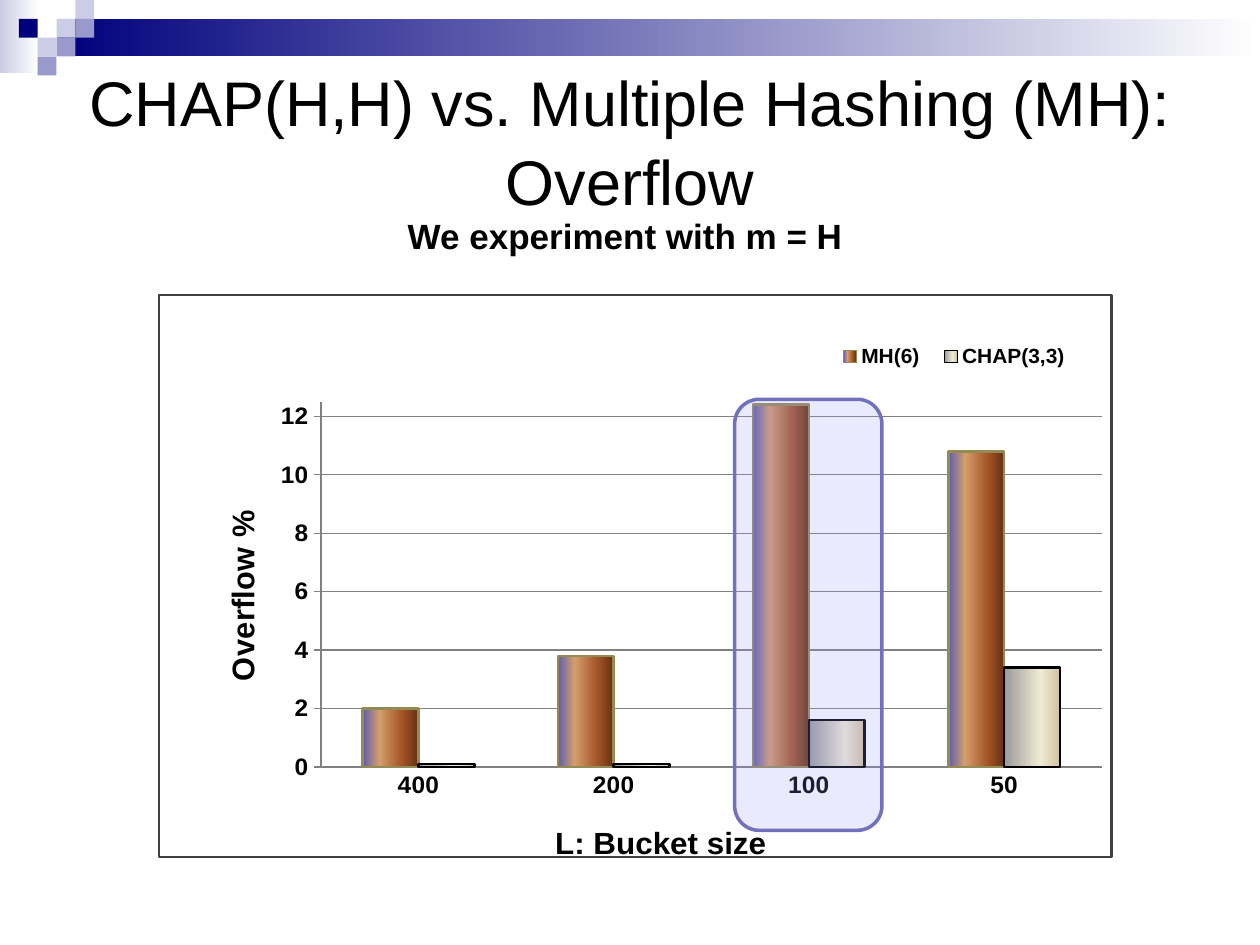
from dataclasses import dataclass

from lxml import etree
from pptx import Presentation
from pptx.chart.data import CategoryChartData
from pptx.dml.color import RGBColor
from pptx.enum.chart import XL_CHART_TYPE, XL_LEGEND_POSITION, XL_TICK_MARK
from pptx.enum.shapes import MSO_SHAPE
from pptx.enum.text import MSO_ANCHOR, MSO_AUTO_SIZE, PP_ALIGN
from pptx.oxml import parse_xml
from pptx.oxml.ns import nsdecls, qn
from pptx.util import Cm, Pt

RECTANGLE = MSO_SHAPE.RECTANGLE
ROUNDED = MSO_SHAPE.ROUNDED_RECTANGLE
CENTER = PP_ALIGN.CENTER
COLUMNS = XL_CHART_TYPE.COLUMN_CLUSTERED
LEGEND_RIGHT = XL_LEGEND_POSITION.RIGHT
TICK_CROSS = XL_TICK_MARK.CROSS
TICK_NONE = XL_TICK_MARK.NONE


@dataclass(frozen=True)
class Theme:
    font: str = "Arial"
    text: str = "000000"
    navy: str = "00007D"
    mid: str = "9999CC"
    pale: str = "CCCCE6"
    white: str = "FFFFFF"
    grid: str = "808080"
    frame: str = "404040"
    highlight: str = "9999FF"
    highlight_line: str = "7171BD"
    highlight_opacity: int = 20
    title_size: int = 36
    subtitle_size: int = 20
    axis_title_size: int = 18
    tick_size: int = 14
    legend_size: int = 12
    copper: tuple = ((0, "5D5DAE"), (30, "D49E6C"), (70, "A65528"), (100, "663012"))
    cream: tuple = ((0, "999999"), (65, "F0EBD5"), (100, "D1C39F"))
    copper_line: str = "948A54"


THEME = Theme()


def rgb(value):
    return RGBColor.from_string(value)


def style_font(font, size, bold=False):
    font.name = THEME.font
    font.size = Pt(size)
    font.bold = bold
    font.color.rgb = rgb(THEME.text)


def style_line(line, color, width):
    line.color.rgb = rgb(color)
    line.width = Pt(width)


def fill_gradient(fill, properties, stops):
    fill.gradient()
    fill.gradient_angle = 0
    stop_list = properties.find(qn("a:gradFill")).find(qn("a:gsLst"))
    for stop in list(stop_list):
        stop_list.remove(stop)
    for position, color in stops:
        stop = etree.SubElement(stop_list, qn("a:gs"), pos=str(position * 1000))
        etree.SubElement(stop, qn("a:srgbClr"), val=color)


def add_block(slide, kind, box):
    shape = slide.shapes.add_shape(kind, *(Cm(length) for length in box))
    shape.shadow.inherit = False
    shape.line.fill.background()
    return shape


def add_banner(slide, left, top, width):
    cell = 0.38
    bands = (
        ((left, top, 0.79, 1.47), THEME.pale),
        ((left + 3 * cell, top + cell, width - 3 * cell, 2 * cell), THEME.navy),
    )
    for box, color in bands:
        shape = add_block(slide, RECTANGLE, box)
        fill_gradient(shape.fill, shape._element.spPr, ((0, color), (100, THEME.white)))
    tiles = (
        (3, 1, THEME.pale), (4, 0, THEME.pale), (4, 1, THEME.mid), (2, 2, THEME.pale),
        (1, 1, THEME.navy), (3, 2, THEME.mid), (2, 3, THEME.mid),
    )
    for column, row, color in tiles:
        box = (left + column * cell, top + row * cell, cell, cell)
        shape = add_block(slide, RECTANGLE, box)
        shape.fill.solid()
        shape.fill.fore_color.rgb = rgb(color)


def write_line(frame, text, size, bold=False):
    frame.word_wrap = True
    frame.vertical_anchor = MSO_ANCHOR.TOP
    paragraph = frame.paragraphs[0]
    paragraph.alignment = CENTER
    run = paragraph.add_run()
    run.text = text
    style_font(run.font, size, bold)
    return paragraph


def add_heading(slide, left, top, width):
    title = slide.shapes.title
    title.left, title.top, title.width, title.height = Cm(left), Cm(top), Cm(width), Cm(2.54)
    title.text_frame.auto_size = MSO_AUTO_SIZE.NONE
    paragraph = write_line(
        title.text_frame, "CHAP(H,H) vs. Multiple Hashing (MH): Overflow", THEME.title_size
    )
    paragraph.line_spacing = 1.05
    subtitle = slide.shapes.add_textbox(
        Cm(left + width / 6), Cm(top + 3.12), Cm(width * 2 / 3), Cm(1.11)
    )
    write_line(subtitle.text_frame, "We experiment with m = H ", THEME.subtitle_size, True)


def place_in_chart(element, inner=False, **fractions):
    layout = element.find(qn("c:layout"))
    if layout is None:
        layout = etree.Element(qn("c:layout"))
        element.insert(0, layout)
    manual = etree.SubElement(layout, qn("c:manualLayout"))
    if inner:
        etree.SubElement(manual, qn("c:layoutTarget"), val="inner")
    for mode in ("xMode", "yMode"):
        etree.SubElement(manual, qn(f"c:{mode}"), val="edge")
    for name, value in fractions.items():
        etree.SubElement(manual, qn(f"c:{name}"), val=str(value))


def style_axis(axis, title, x, y, tick):
    run = axis.axis_title.text_frame.paragraphs[0].add_run()
    run.text = title
    style_font(run.font, THEME.axis_title_size, True)
    place_in_chart(axis.axis_title._element, x=x, y=y)
    style_font(axis.tick_labels.font, THEME.tick_size, True)
    axis.major_tick_mark = tick
    axis.minor_tick_mark = TICK_NONE
    style_line(axis.format.line, THEME.grid, 0.75)


def add_overflow_chart(slide, left, top, width, height):
    data = CategoryChartData()
    data.categories = ["400", "200", "100", "50"]
    data.add_series("MH(6)", (2, 3.8, 12.4, 10.8))
    data.add_series("CHAP(3,3)", (0.1, 0.1, 1.6, 3.4))
    chart = slide.shapes.add_chart(
        COLUMNS, Cm(left), Cm(top), Cm(width), Cm(height), data
    ).chart
    style_font(chart.font, THEME.legend_size)
    chart.has_title = False

    style_axis(chart.category_axis, "L: Bucket size", 0.41, 0.93, TICK_NONE)
    value_axis = chart.value_axis
    style_axis(value_axis, "Overflow %", 0.06, 0.38, TICK_CROSS)
    value_axis.minimum_scale = 0
    value_axis.maximum_scale = 12.5
    value_axis.major_unit = 2
    style_line(value_axis.major_gridlines.format.line, THEME.grid, 0.75)

    plot = chart.plots[0]
    plot.gap_width = 150
    plot.overlap = 0
    plot.vary_by_categories = False
    looks = ((THEME.copper, THEME.copper_line), (THEME.cream, THEME.text))
    for series, (stops, line_color) in zip(plot.series, looks):
        series_format = series.format
        fill_gradient(series_format.fill, series._element.spPr, stops)
        style_line(series_format.line, line_color, 1.5)

    chart.has_legend = True
    legend = chart.legend
    legend.position = LEGEND_RIGHT
    legend.include_in_layout = False
    style_font(legend.font, THEME.legend_size, True)
    place_in_chart(legend._element, x=0.7, y=0.08, w=0.27, h=0.06)

    chart_root = chart._chartSpace.find(qn("c:chart"))
    place_in_chart(chart_root.find(qn("c:plotArea")), True, x=0.17, y=0.19, w=0.82, h=0.65)
    chart_root.addnext(parse_xml(
        f'<c:spPr {nsdecls("c", "a")}><a:noFill/><a:ln w="{Pt(1.5)}"><a:solidFill>'
        f'<a:srgbClr val="{THEME.frame}"/></a:solidFill></a:ln></c:spPr>'
    ))

    highlight = add_block(slide, ROUNDED, (left + 11.63, top + 2.13, 2.97, 8.69))
    highlight.fill.solid()
    highlight.fill.fore_color.rgb = rgb(THEME.highlight)
    color = highlight._element.spPr.find(qn("a:solidFill"))[0]
    etree.SubElement(color, qn("a:alpha"), val=str(THEME.highlight_opacity * 1000))
    style_line(highlight.line, THEME.highlight_line, 2)


def main():
    presentation = Presentation()
    presentation.slide_width = Cm(25.4)
    presentation.slide_height = Cm(19.05)
    slide = presentation.slides.add_slide(presentation.slide_layouts[5])
    add_banner(slide, 0, 0, 25.4)
    add_overflow_chart(slide, 3.18, 5.92, 19.25, 11.63)
    add_heading(slide, 0, 1.07, 25.4)
    presentation.save("out.pptx")


if __name__ == "__main__":
    main()
